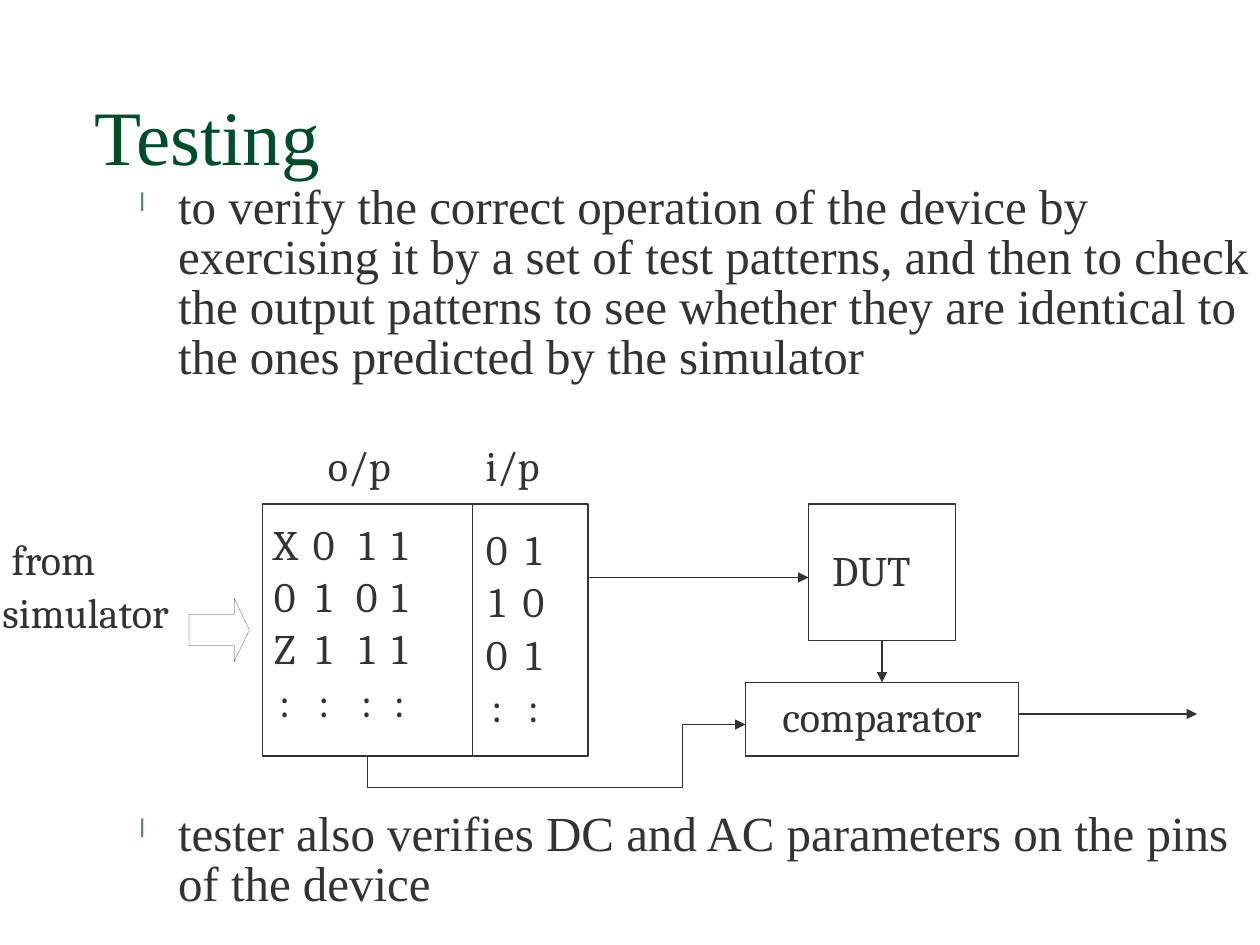
"""Build the Testing slide: two bullets around a device test block diagram."""
from lxml.etree import SubElement
from pptx import Presentation
from pptx.dml.color import RGBColor
from pptx.enum.shapes import MSO_CONNECTOR, MSO_SHAPE
from pptx.enum.text import MSO_ANCHOR, PP_ALIGN
from pptx.oxml.ns import qn
from pptx.util import Inches, Pt

COLORS = {"ink": "333333", "title": "004C2B", "bullet": "578963"}
FORMATS = {
    "title": {"name": "Times New Roman", "size": Pt(44), "color": "title"},
    "body": {"name": "Times New Roman", "size": Pt(28), "color": "ink"},
    "label": {"name": "Cambria", "size": Pt(24), "color": "ink"},
}
MARGINS = {"margin_left": Inches(0.02), "margin_right": Inches(0.02),
           "margin_top": Inches(0.05), "margin_bottom": Inches(0.05)}

deck = Presentation()
deck.slide_width, deck.slide_height = Inches(10), Inches(7.5)
slide = deck.slides.add_slide(deck.slide_layouts[6])
cell = deck.slide_width // 120


def write(shape, lines, style, tabs=(), bullet=False, **frame_format):
    frame = shape.text_frame
    for key, value in {**MARGINS, "word_wrap": True, **frame_format}.items():
        setattr(frame, key, value)
    for index, line in enumerate(lines):
        paragraph = frame.paragraphs[0] if index == 0 else frame.add_paragraph()
        paragraph.line_spacing = 0.85
        if index:
            paragraph.space_before = Pt(5.4)
        props = paragraph._p.get_or_add_pPr()
        if bullet:
            props.set("marL", str(Inches(0.81)))
            props.set("indent", str(Inches(-0.31)))
            color = SubElement(props, qn("a:buClr"))
            SubElement(color, qn("a:srgbClr"), val=COLORS["bullet"])
            SubElement(props, qn("a:buSzPct"), val="50000")
            SubElement(props, qn("a:buChar"), char="l")
        if tabs:
            stops = SubElement(props, qn("a:tabLst"))
            for stop in tabs:
                SubElement(stops, qn("a:tab"), pos=str(Inches(stop)), algn="ctr")
        run = paragraph.add_run()
        run.text = line
        run.font.name = FORMATS[style]["name"]
        run.font.size = FORMATS[style]["size"]
        run.font.color.rgb = RGBColor.from_string(COLORS[FORMATS[style]["color"]])


def connect(start, end, arrow=False):
    line = slide.shapes.add_connector(
        MSO_CONNECTOR.STRAIGHT, *[int(cell * place) for place in (*start, *end)])
    line.line.color.rgb = RGBColor.from_string(COLORS["ink"])
    line.line.width = Pt(0.75)
    if arrow:
        SubElement(line.line._get_or_add_ln(), qn("a:tailEnd"), type="triangle", w="med", len="med")
    SubElement(line._element.spPr, qn("a:effectLst"))
    return line


bullets = [
    (17, "to verify the correct operation of the device by exercising it by a set of test "
         "patterns, and then to check the output patterns to see whether they are identical "
         "to the ones predicted by the simulator"),
    (76.7, "tester also verifies DC and AC parameters on the pins of the device"),
]
for row, sentence in bullets:
    box = slide.shapes.add_textbox(7 * cell, int(row * cell), 113 * cell, 12 * cell)
    write(box, [sentence], "body", bullet=True)

blocks = {}
for part, kind, column, row, columns, rows, weight in [
    ("patterns", MSO_SHAPE.RECTANGLE, 25, 48, 31, 24, 0.75),
    ("device", MSO_SHAPE.RECTANGLE, 77, 48, 14, 13, 0.75),
    ("comparator", MSO_SHAPE.RECTANGLE, 71, 65, 26, 7, 0.75),
    ("feed", MSO_SHAPE.RIGHT_ARROW, 18, 57, 5.75, 6, 0.11),
]:
    block = slide.shapes.add_shape(
        kind, *[int(cell * span) for span in (column, row, columns, rows)])
    block.shadow.inherit = False
    block.fill.background()
    block.line.color.rgb = RGBColor.from_string(COLORS["ink"])
    block.line.width = Pt(weight)
    blocks[part] = block
blocks["feed"].adjustments[1] = 0.25
write(blocks["comparator"], ["comparator"], "label", vertical_anchor=MSO_ANCHOR.MIDDLE)
blocks["comparator"].text_frame.paragraphs[0].alignment = PP_ALIGN.CENTER

connect((45, 48), (45, 72))
feedback = [(35, 72), (35, 75), (65, 75), (65, 69), (71, 69)]
for start, end in zip(feedback, feedback[1:]):
    connect(start, end, arrow=end == feedback[-1])
connect((97, 68), (114, 68), arrow=True)
connect((56, 55), (77, 55), arrow=True)
response = connect((84, 61), (84, 65), arrow=True)
response.begin_connect(blocks["device"], 2)
response.end_connect(blocks["comparator"], 0)

for column, row, columns, rows, lines, tabs in [
    (79, 52, 10.7, 6, ["DUT"], ()),
    (25.8, 49.5, 17.9, 22, ["\tX\t0\t1\t1", "\t0\t1\t0\t1", "\tZ\t1\t1\t1", "\t:\t:\t:\t:"],
     (0.09, 0.4, 0.74, 1)),
    (46, 50, 8.4, 22, ["\t0\t1", "\t1\t0", "\t0\t1", "\t:\t:"], (0.09, 0.38)),
    (0, 51, 17.5, 11, [" from", "simulator"], ()),
    (31, 42, 7.5, 6, ["o/p"], ()),
    (46, 42, 6.6, 6, ["i/p"], ()),
]:
    label = slide.shapes.add_textbox(
        *[int(cell * span) for span in (column, row, columns, rows)])
    write(label, lines, "label", tabs)

title = slide.shapes.add_textbox(9 * cell, 6 * cell, 102 * cell, 15 * cell)
write(title, ["Testing"], "title", vertical_anchor=MSO_ANCHOR.MIDDLE,
      **dict.fromkeys(MARGINS, 0))

deck.save("out.pptx")
